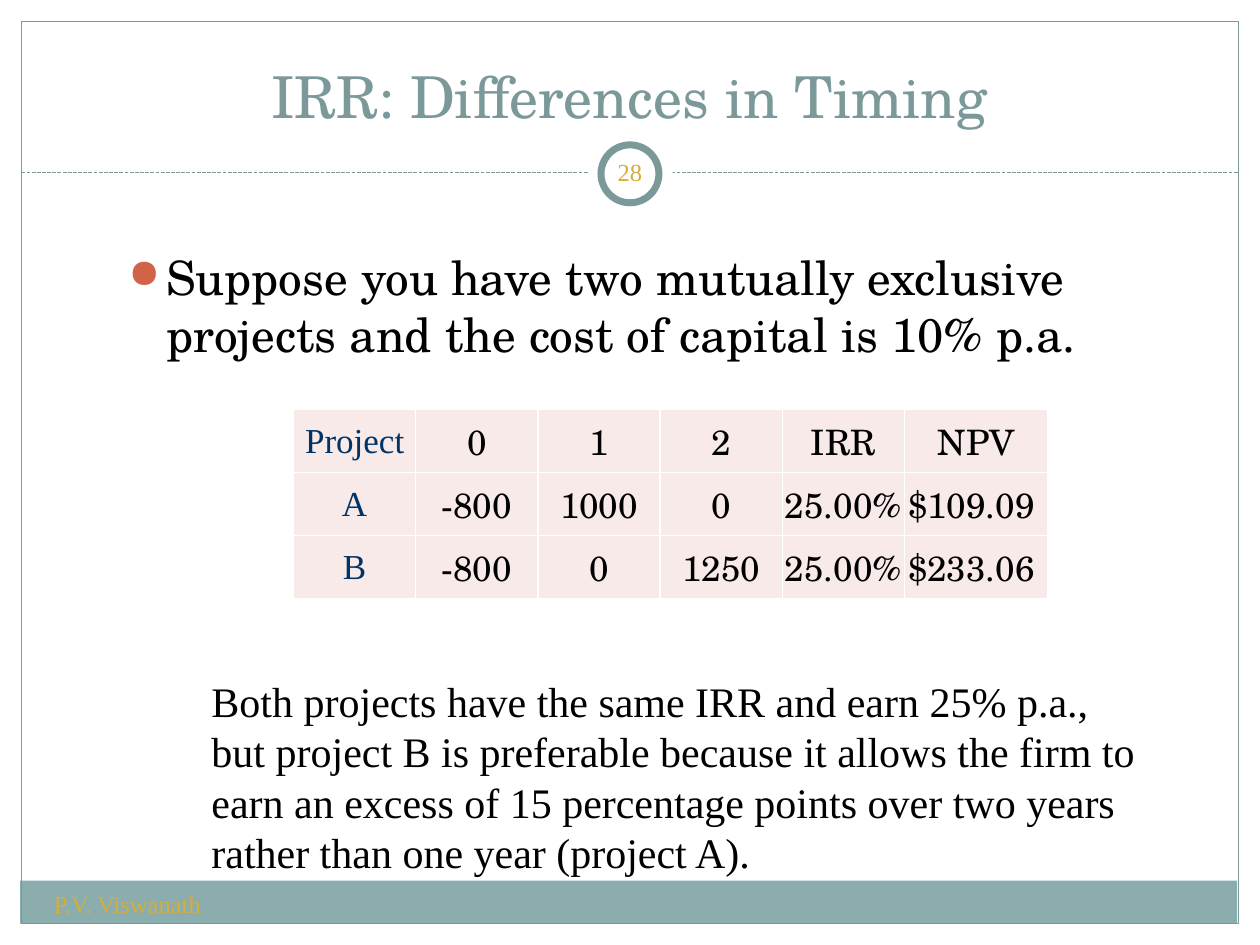
from lxml.etree import SubElement
from pptx import Presentation
from pptx.dml.color import RGBColor
from pptx.enum.dml import MSO_LINE
from pptx.enum.shapes import MSO_CONNECTOR, MSO_SHAPE
from pptx.enum.text import MSO_ANCHOR, MSO_AUTO_SIZE, PP_ALIGN
from pptx.oxml import parse_xml
from pptx.oxml.ns import nsdecls, qn
from pptx.util import Pt

PX = 9144
SERIF = "Times New Roman"
SCHOLA = "TeX Gyre Schola"
TEAL, GOLD, NAVY = "7C999A", "D5AD3B", "003366"
rgb = RGBColor.from_string


def write(tf, text, size, font, color, align=PP_ALIGN.LEFT, **frame):
    frame = {"word_wrap": True, "auto_size": MSO_AUTO_SIZE.NONE, **frame}
    for name, value in frame.items():
        setattr(tf, name, value)
    p = tf.paragraphs[0]
    p.alignment = align
    r = p.add_run()
    r.text = text
    for name, value in {"size": Pt(size), "name": font}.items():
        setattr(r.font, name, value)
    r.font.color.rgb = rgb(color)
    return p


prs = Presentation()
prs.slide_width, prs.slide_height = 1000 * PX, 750 * PX
s = prs.slides.add_slide(prs.slide_layouts[5])

rule = s.shapes.add_connector(MSO_CONNECTOR.STRAIGHT, 17 * PX, 137 * PX, 983 * PX, 137 * PX)
rule.line.color.rgb = rgb(TEAL)
rule.line.width = Pt(0.75)
rule.line.dash_style = MSO_LINE.SQUARE_DOT
SubElement(rule.line._get_or_add_ln().getparent(), qn("a:effectLst"))

for kind, box, fill, weight in [
    (MSO_SHAPE.RECTANGLE, (16, 699, 966, 34), "8CADAE", 0),
    (MSO_SHAPE.RECTANGLE, (17, 17, 966, 716), None, 0.75),
    (MSO_SHAPE.OVAL, (467, 105, 67, 67), "FFFFFF", 0),
    (MSO_SHAPE.OVAL, (477, 115, 46, 46), "FFFFFF", 4),
]:
    sp = s.shapes.add_shape(kind, *[n * PX for n in box])
    sp.shadow.inherit = False
    if fill:
        sp.fill.solid()
        sp.fill.fore_color.rgb = rgb(fill)
    else:
        sp.fill.background()
    if weight:
        sp.line.color.rgb = rgb(TEAL)
        sp.line.width = Pt(weight)
    else:
        sp.line.fill.background()

title = s.shapes.title
for name, n in {"left": 33, "top": 25, "width": 933, "height": 83}.items():
    setattr(title, name, n * PX)
write(title.text_frame, "IRR: Differences in Timing", 33, SCHOLA, TEAL,
      PP_ALIGN.CENTER, vertical_anchor=MSO_ANCHOR.BOTTOM)

body = s.shapes.add_textbox(92 * PX, 192 * PX, 870 * PX, 125 * PX)
p = write(body.text_frame,
          "Suppose you have two mutually exclusive projects and the cost of capital is 10% p.a.",
          27, SCHOLA, "000000")
p.space_before = Pt(5.4)
pPr = p._p.get_or_add_pPr()
pPr.set("marL", str(30 * PX))
pPr.set("indent", str(-30 * PX))
SubElement(SubElement(pPr, qn("a:buClr")), qn("a:srgbClr"), val="D16349")
SubElement(pPr, qn("a:buSzPct"), val="85000")
SubElement(pPr, qn("a:buChar"), char="●")

footer = s.shapes.add_textbox(33 * PX, 701 * PX, 392 * PX, 40 * PX)
write(footer.text_frame, "P.V. Viswanath", 14, SERIF, GOLD)

number = s.shapes.add_textbox(475 * PX, 112 * PX, 50 * PX, 48 * PX)
write(number.text_frame, "28", 14, SERIF, GOLD, PP_ALIGN.CENTER,
      vertical_anchor=MSO_ANCHOR.MIDDLE, margin_left=5 * PX, margin_right=5 * PX)

rows = [
    ["Project", "0", "1", "2", "IRR", "NPV"],
    ["A", "-800", "1000", "0", "25.00%", "$109.09 "],
    ["B", "-800", "0", "1250", "25.00%", "$233.06 "],
]
table = s.shapes.add_table(3, 6, 233 * PX, 325 * PX, 599 * PX, 150 * PX).table
for col, n in zip(table.columns, [97] * 5 + [114]):
    col.width = n * PX
for i, row in enumerate(rows):
    for j, text in enumerate(row):
        cell = table.cell(i, j)
        font, color = (SCHOLA, "000000") if j else (SERIF, NAVY)
        write(cell.text_frame, text, 20, font, color, PP_ALIGN.CENTER)
        for name, value in {"vertical_anchor": MSO_ANCHOR.MIDDLE, "margin_left": PX,
                            "margin_right": PX, "margin_top": PX, "margin_bottom": 0}.items():
            setattr(cell, name, value)
        tcPr = cell._tc.get_or_add_tcPr()
        for side in "LRTB":
            tcPr.append(parse_xml(
                f'<a:ln{side} {nsdecls("a")} w="12700"><a:solidFill>'
                f'<a:srgbClr val="FFFFFF"/></a:solidFill></a:ln{side}>'))
        cell.fill.solid()
        cell.fill.fore_color.rgb = rgb("F7EAE9")

note = s.shapes.add_textbox(158 * PX, 531 * PX, 758 * PX, 172 * PX)
write(note.text_frame,
      "Both projects have the same IRR and earn 25% p.a., but project B is preferable "
      "because it allows the firm to earn an excess of 15 percentage points over two years "
      "rather than one year (project A).",
      24, SERIF, "000000", auto_size=MSO_AUTO_SIZE.SHAPE_TO_FIT_TEXT)

prs.save("out.pptx")
